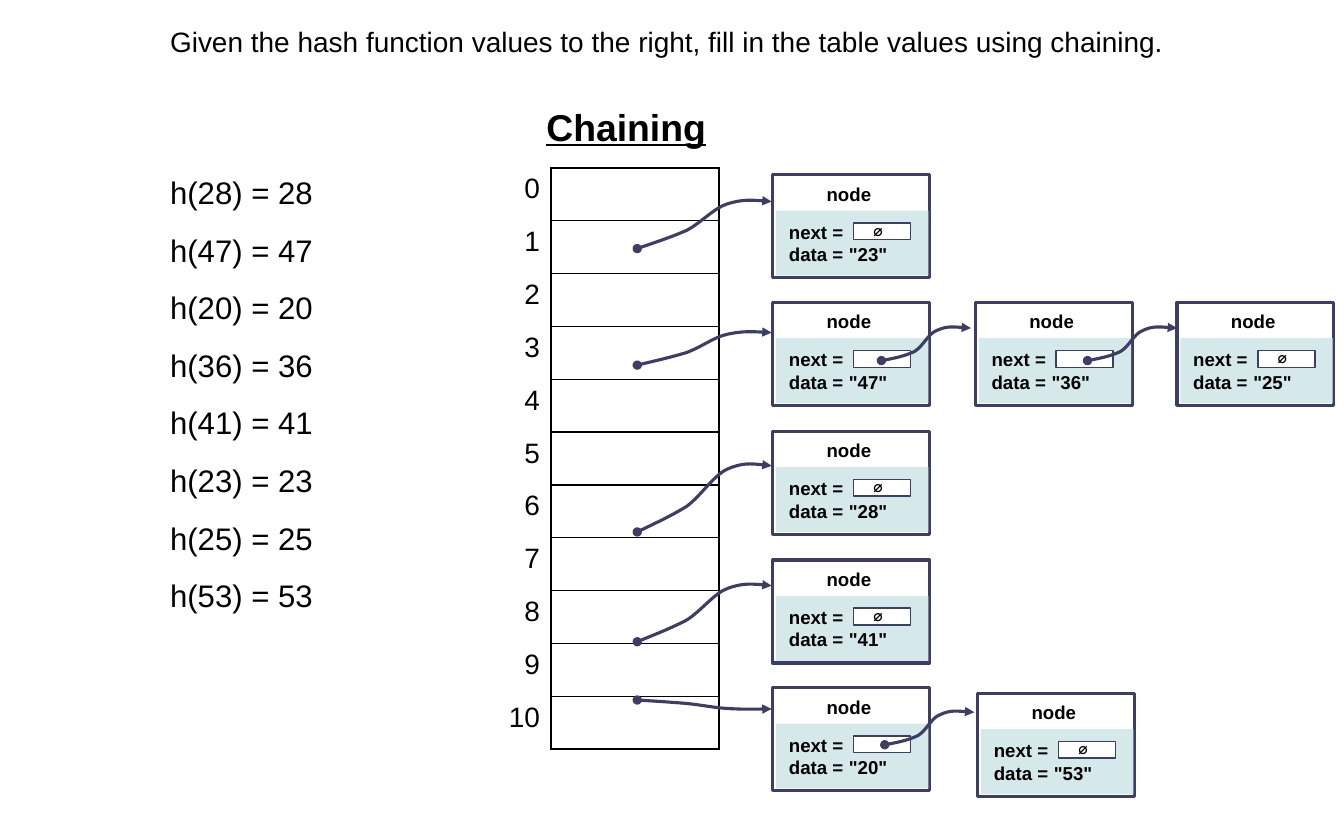
import pptx
import pptx.util
import pptx.dml.color
import pptx.enum.shapes
import pptx.enum.text
import pptx.oxml
import pptx.oxml.ns
from lxml import etree

Inches, Pt = pptx.util.Inches, pptx.util.Pt
ALIGN = pptx.enum.text.PP_ALIGN
RECT = pptx.enum.shapes.MSO_SHAPE.RECTANGLE
qn = pptx.oxml.ns.qn

INK, MIST, WHITE, BLACK = "3D3E66", "D6E9EA", "FFFFFF", "000000"

HASHED = [28, 47, 20, 36, 41, 23, 25, 53]

# value, left, top, pointer start, pointer end, whether it links to a next node
NODES = [
    (47, 6.90, 2.70, (5.69, 3.26), (6.89, 2.97), True),
    (20, 6.90, 6.14, (5.69, 6.25), (6.89, 6.33), True),
    (41, 6.90, 5.00, (5.69, 5.73), (6.89, 5.23), False),
    (23, 6.90, 1.56, (5.69, 2.22), (6.89, 1.80), False),
    (36, 8.71, 2.70, (7.87, 3.22), (8.67, 2.93), True),
    (25, 10.51, 2.70, (9.71, 3.22), (10.51, 2.93), False),
    (53, 8.73, 6.19, (7.90, 6.65), (8.70, 6.36), False),
    (28, 6.90, 3.85, (5.69, 4.75), (6.89, 4.16), False),
]

# Bezier points as shares of the way across and of the height left to climb
SLOT_CURVE = [(0, 1), (.12, .88), (.25, .76), (.37, .61), (.48, .44),
              (.57, .14), (.67, .05), (.78, -.05), (.89, -.03), (1, 0)]
NEXT_CURVE = [(0, 1), (.14, .93), (.26, .86), (.37, .72), (.47, .55),
              (.52, .17), (.62, .07), (.73, -.07), (.86, -.03), (1, 0)]


def color(code):
    return pptx.dml.color.RGBColor.from_string(code)


def style(par, size, bold=False, font="Arial", under=False, align=ALIGN.LEFT):
    par.alignment = align
    for run in par.runs:
        run.font.size = Pt(size)
        run.font.name = font
        run.font.bold = bold
        run.font.underline = under
        run.font.color.rgb = color(BLACK)


def add_text(shapes, text, left, top, width, height, size,
             inset=True, wrap=True, before=0, **look):
    box = shapes.add_textbox(Inches(left), Inches(top), Inches(width), Inches(height))
    frame = box.text_frame
    frame.text = text
    frame.word_wrap = wrap
    frame.auto_size = pptx.enum.text.MSO_AUTO_SIZE.SHAPE_TO_FIT_TEXT
    if not inset:
        frame.margin_left = frame.margin_right = 0
        frame.margin_top = frame.margin_bottom = 0
    for i, par in enumerate(frame.paragraphs):
        style(par, size, **look)
        if before and i:
            par.space_before = Pt(before)


def add_rect(shapes, left, top, width, height, fill, line=0):
    rect = shapes.add_shape(RECT, Inches(left), Inches(top), Inches(width), Inches(height))
    rect.shadow.inherit = False
    rect.fill.solid()
    rect.fill.fore_color.rgb = color(fill)
    if line:
        rect.line.color.rgb = color(INK)
        rect.line.width = Pt(line)
    else:
        rect.line.fill.background()


def add_curve(shapes, start, end, shares):
    points = [(Inches(start[0] + (end[0] - start[0]) * across),
               Inches(end[1] + (start[1] - end[1]) * climb))
              for across, climb in shares]
    build = shapes.build_freeform(*points[0])
    build.add_line_segments(points[1:], close=False)
    curve = build.convert_to_shape()
    curve.shadow.inherit = False
    curve.fill.background()
    curve.line.color.rgb = color(INK)
    curve.line.width = Pt(2)
    # Turn each three line segments into one cubic Bezier
    lines = list(curve.element.iter(qn("a:lnTo")))
    for i in range(0, len(lines), 3):
        bezier = etree.Element(qn("a:cubicBezTo"))
        lines[i].addprevious(bezier)
        for line in lines[i:i + 3]:
            bezier.append(line[0])
            line.getparent().remove(line)
    # Dot at the start, arrowhead at the end
    ln = curve.line._get_or_add_ln()
    etree.SubElement(ln, qn("a:headEnd"), type="oval")
    etree.SubElement(ln, qn("a:tailEnd"), type="triangle")


def add_node(slide, value, left, top, start, end, linked):
    shapes = slide.shapes.add_group_shape().shapes
    add_rect(shapes, left, top, 1.4, 0.92, WHITE, 2)
    add_rect(shapes, left + 0.03, top + 0.32, 1.36, 0.58, MIST)
    add_text(shapes, "next =\ndata =", left + 0.03, top + 0.41, 0.6, 0.4, 12,
             inset=False, bold=True, align=ALIGN.RIGHT)
    add_rect(shapes, left + 0.72, top + 0.43, 0.51, 0.15, WHITE, 1)
    add_text(shapes, f'"{value}"', left + 0.68, top + 0.61, 0.6, 0.2, 12,
             inset=False, bold=True)
    add_text(shapes, "node", left + 0.38, top + 0.07, 0.6, 0.2, 12,
             inset=False, bold=True, align=ALIGN.CENTER)
    if not linked:
        add_text(shapes, "∅", left + 0.8, top + 0.37, 0.33, 0.27, 10,
                 wrap=False, bold=True, font="DejaVu Sans Mono")


def set_border(cell, code):
    props = cell._tc.get_or_add_tcPr()
    for i, side in enumerate(("lnL", "lnR", "lnT", "lnB")):
        props.insert(i, pptx.oxml.parse_xml(
            f'<a:{side} {pptx.oxml.ns.nsdecls("a")} w="12700"><a:solidFill>'
            f'<a:srgbClr val="{code}"/></a:solidFill></a:{side}>'))


def add_slots(slide, count):
    table = slide.shapes.add_table(count, 2, Inches(4.42), Inches(1.5),
                                   Inches(2), Inches(5.19)).table
    table.first_row = table.horz_banding = False
    table.columns[0].width = Inches(0.5)
    table.columns[1].width = Inches(1.5)
    for i in range(count):
        label, slot = table.cell(i, 0), table.cell(i, 1)
        label.text = str(i)
        style(label.text_frame.paragraphs[0], 18, align=ALIGN.RIGHT)
        for cell, edge in ((label, WHITE), (slot, BLACK)):
            cell.fill.solid()
            cell.fill.fore_color.rgb = color(WHITE)
            set_border(cell, edge)
        # The shared edge is black
        label._tc.tcPr.find(qn("a:lnR")).find(".//" + qn("a:srgbClr")).set("val", BLACK)


def main():
    deck = pptx.Presentation()
    deck.slide_width, deck.slide_height = Inches(12), Inches(7.5)
    slide = deck.slides.add_slide(deck.slide_layouts[6])

    # Hash table
    add_slots(slide, 11)

    # Hash values and headings
    add_text(slide.shapes, "\n".join(f"h({n}) = {n}" for n in HASHED),
             1.42, 1.5, 3.5, 3.97, 20, before=13)
    add_text(slide.shapes, "Given the hash function values to the right, "
             "fill in the table values using chaining.", 1.42, 0.17, 9.33, 0.4, 18)
    add_text(slide.shapes, "Chaining", 4.78, 0.88, 1.64, 0.5, 24,
             wrap=False, bold=True, under=True)

    # Chained nodes, then the pointers on top of them
    for node in NODES:
        add_node(slide, *node)
    for _, left, _, start, end, _ in NODES:
        add_curve(slide.shapes, start, end, SLOT_CURVE if left == 6.9 else NEXT_CURVE)

    deck.save("out.pptx")


if __name__ == "__main__":
    main()
